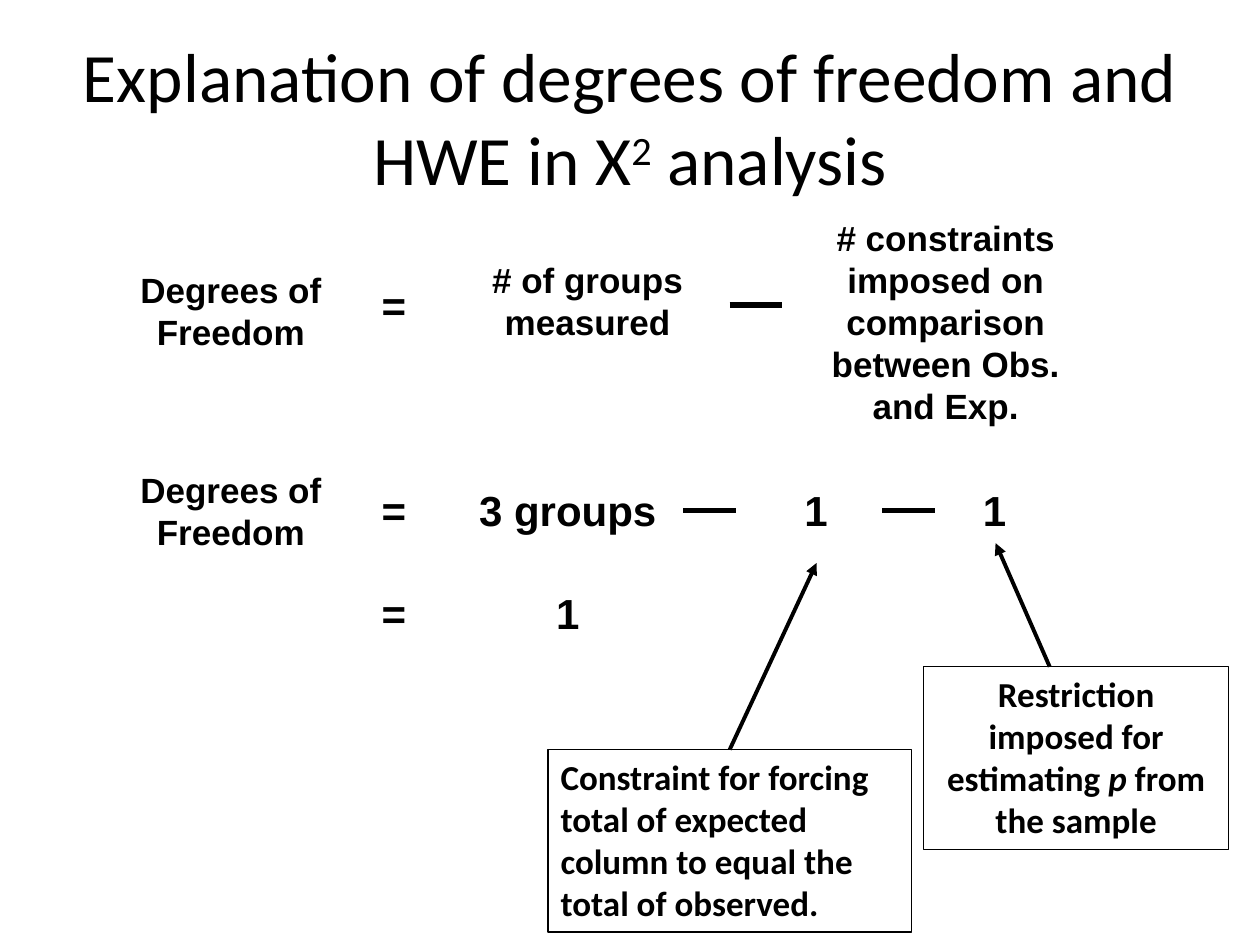
from lxml import etree
from pptx import Presentation
from pptx.dml.color import RGBColor
from pptx.enum.shapes import MSO_CONNECTOR, MSO_SHAPE
from pptx.enum.text import MSO_ANCHOR, MSO_AUTO_SIZE, PP_ALIGN
from pptx.oxml.ns import qn
from pptx.util import Cm, Pt

LEFT, CENTER = PP_ALIGN.LEFT, PP_ALIGN.CENTER
TOP, MIDDLE = MSO_ANCHOR.TOP, MSO_ANCHOR.MIDDLE
NO_FIT, GROW = MSO_AUTO_SIZE.NONE, MSO_AUTO_SIZE.SHAPE_TO_FIT_TEXT
STRAIGHT, RECTANGLE = MSO_CONNECTOR.STRAIGHT, MSO_SHAPE.RECTANGLE
BLACK, WHITE = "000000", "FFFFFF"


def paint(color, hex_value):
    color.rgb = RGBColor.from_string(hex_value)


def write(frame, runs, font_format, frame_format, align=CENTER):
    for key, value in frame_format.items():
        setattr(frame, key, value)
    paragraph = frame.paragraphs[0]
    paragraph.alignment = align
    for words, extra in runs:
        run = paragraph.add_run()
        run.text = words
        for key, value in {**font_format, **extra}.items():
            if key == "baseline":
                run.font._element.set(key, value)
            else:
                setattr(run.font, key, value)
        paint(run.font.color, BLACK)


TITLE_FONT = {"name": "Calibri", "size": Pt(39.6)}
TERM_FONT = {"name": "Arial", "size": Pt(20), "bold": True}
VALUE_FONT = {"name": "Arial", "size": Pt(24), "bold": True}
NOTE_FONT = {"name": "Calibri", "size": Pt(20), "bold": True}
TITLE_FRAME = {"word_wrap": True, "auto_size": NO_FIT, "vertical_anchor": MIDDLE}
BODY_FRAME = {"word_wrap": True, "auto_size": GROW, "vertical_anchor": TOP}

presentation = Presentation()
presentation.slide_width, presentation.slide_height = Cm(25.4), Cm(19.05)
slide = presentation.slides.add_slide(presentation.slide_layouts[5])
shapes = slide.shapes

title = shapes.title
title.left, title.top, title.width, title.height = Cm(1.27), Cm(0.76), Cm(22.86), Cm(3.18)
title_runs = [
    ("Explanation of degrees of freedom and HWE in X", {}),
    ("2", {"baseline": "30000"}),
    (" analysis", {}),
]
write(title.text_frame, title_runs, TITLE_FONT, TITLE_FRAME)

TERM_WIDTH, EQUALS_WIDTH, ONE_WIDTH = 5.51, 3.18, 3.48
TERM_X, EQUALS_X, RESULT_X = 1.9, 6.35, 8.69
VALUES_Y, RESULT_Y = 9.65, 11.71

terms = [
    ("Degrees of Freedom", TERM_X, 5.28, 1.96),
    ("# of groups measured", 9.09, 5.08, 1.96),
    ("# constraints imposed on comparison between Obs. and Exp.", 16.31, 4.24, 4.52),
    ("Degrees of Freedom", TERM_X, 9.32, 1.96),
]
for words, x, y, height in terms:
    term = shapes.add_textbox(Cm(x), Cm(y), Cm(TERM_WIDTH), Cm(height))
    write(term.text_frame, [(words, {})], TERM_FONT, BODY_FRAME)

values = [
    ("=", EQUALS_X, 5.51, EQUALS_WIDTH),
    ("=", EQUALS_X, VALUES_Y, EQUALS_WIDTH),
    ("3 groups", RESULT_X, VALUES_Y, TERM_WIDTH),
    ("1", 14.71, VALUES_Y, ONE_WIDTH),
    ("1", 18.31, VALUES_Y, ONE_WIDTH),
    ("=", EQUALS_X, RESULT_Y, EQUALS_WIDTH),
    ("1", RESULT_X, RESULT_Y, TERM_WIDTH),
]
for words, x, y, width in values:
    value_label = shapes.add_textbox(Cm(x), Cm(y), Cm(width), Cm(1.27))
    write(value_label.text_frame, [(words, {})], VALUE_FONT, BODY_FRAME)

restriction_runs = [
    ("Restriction imposed for estimating ", {}),
    ("p", {"italic": True}),
    (" from the sample", {}),
]
constraint_runs = [
    ("Constraint for forcing total of expected column to equal the total of observed.", {}),
]
notes = [
    (restriction_runs, 18.62, 13.44, 6.15, CENTER),
    (constraint_runs, 11.05, 15.11, 7.32, LEFT),
]
for runs, x, y, width, align in notes:
    note = shapes.add_shape(RECTANGLE, Cm(x), Cm(y), Cm(width), Cm(3.68))
    note.shadow.inherit = False
    note.fill.solid()
    paint(note.fill.fore_color, WHITE)
    paint(note.line.color, BLACK)
    note.line.width = Pt(0.75)
    write(note.text_frame, runs, NOTE_FONT, BODY_FRAME, align)

MINUS_LENGTH = 1.06
minus_signs = [(14.71, 6.15), (13.77, 10.29), (17.78, 10.29)]
strokes = [(x, y, x + MINUS_LENGTH, y, 3, False) for x, y in minus_signs]
strokes += [
    (14.71, 15.11, 16.46, 11.35, 2.25, True),
    (21.16, 13.44, 20.07, 10.95, 2.25, True),
]
for x1, y1, x2, y2, weight, pointed in strokes:
    stroke = shapes.add_connector(STRAIGHT, Cm(x1), Cm(y1), Cm(x2), Cm(y2))
    paint(stroke.line.color, BLACK)
    stroke.line.width = Pt(weight)
    if pointed:
        etree.SubElement(stroke.line._get_or_add_ln(), qn("a:tailEnd"), type="triangle")
    etree.SubElement(stroke._element.spPr, qn("a:effectLst"))

presentation.save("out.pptx")
